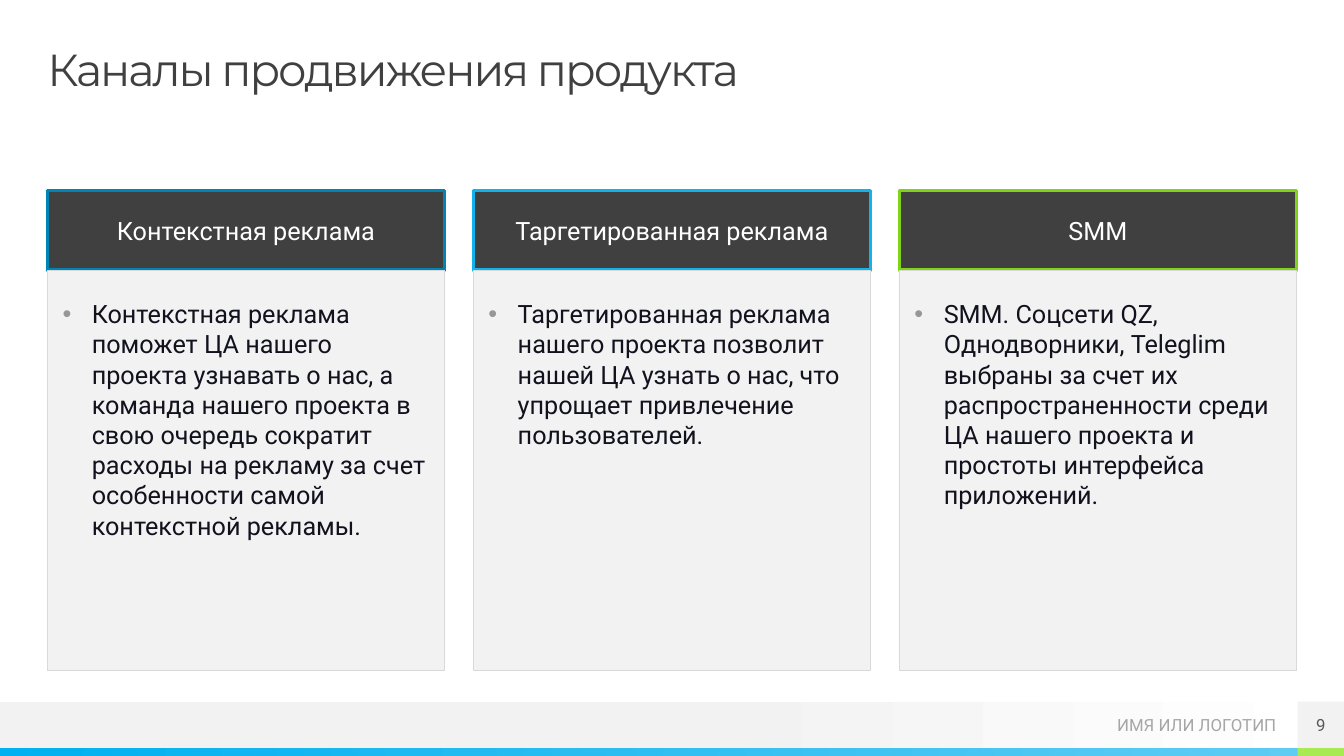
from lxml import etree
from pptx import Presentation
from pptx import util as u
from pptx.dml.color import RGBColor
from pptx.enum import shapes, text
from pptx.oxml import parse_xml
from pptx.oxml.ns import nsdecls

WHITE = RGBColor(0xFF, 0xFF, 0xFF)
PALE = RGBColor(0xF2, 0xF2, 0xF2)
BORDER = RGBColor(0xD9, 0xD9, 0xD9)
SILVER = RGBColor(0xA6, 0xA6, 0xA6)
GREY = RGBColor(0x59, 0x59, 0x59)
DARK = RGBColor(0x40, 0x40, 0x40)
INK = RGBColor(0x12, 0x12, 0x1E)
BLUE = RGBColor(0x00, 0xB0, 0xF0)
SKY = RGBColor(0x5E, 0xCC, 0xF3)
LIME = RGBColor(0xA7, 0xEA, 0x52)
DEEP_BLUE = RGBColor(0x00, 0x84, 0xB4)
CYAN = RGBColor(0x12, 0xB2, 0xEB)
GREEN = RGBColor(0x81, 0xD3, 0x1A)

WIDTH, HEIGHT = 13.33, 7.5
MARGIN = 0.47
CONTENT_W = WIDTH - 2 * MARGIN
COL_W = 3.94
PITCH = (CONTENT_W - COL_W) / 2
HEAD_TOP, HEAD_H, LIST_H = 1.89, 0.79, 3.97
STRIP_H, FOOT_H = 0.08, 0.46
STRIP_TOP = HEIGHT - STRIP_H
FOOT_TOP = STRIP_TOP - FOOT_H
CORNER_X = WIDTH - FOOT_H

COLUMNS = [
    ("Контекстная реклама", DEEP_BLUE,
     "Контекстная реклама поможет ЦА нашего проекта узнавать о нас, а команда "
     "нашего проекта в свою очередь сократит расходы на рекламу за счет "
     "особенности самой контекстной рекламы."),
    ("Таргетированная реклама", CYAN,
     "Таргетированная реклама нашего проекта позволит нашей ЦА узнать о нас, "
     "что упрощает привлечение пользователей."),
    ("SMM", GREEN,
     "SMM. Соцсети QZ, Однодворники, Teleglim выбраны за счет их "
     "распространенности среди ЦА нашего проекта и простоты интерфейса "
     "приложений."),
]

prs = Presentation()
prs.slide_width, prs.slide_height = u.Inches(WIDTH), u.Inches(HEIGHT)
slide = prs.slides.add_slide(prs.slide_layouts.get_by_name("Comparison"))
title, *lists, spare = slide.placeholders
spare.element.getparent().remove(spare.element)


def add_box(left, top, width, height, *colors, start=0):
    """Rectangle with a solid fill, or a left-to-right gradient of two colours."""
    sp = slide.shapes.add_shape(shapes.MSO_SHAPE.RECTANGLE,
                                *map(u.Inches, (left, top, width, height)))
    sp.shadow.inherit = False
    sp.line.fill.background()
    if len(colors) == 1:
        sp.fill.solid()
        sp.fill.fore_color.rgb = colors[0]
    else:
        sp.fill.gradient()
        sp.fill.gradient_angle = 0
        for stop, color, position in zip(sp.fill.gradient_stops, colors, (start, 1)):
            stop.color.rgb = color
            stop.position = position
    return sp


def write(sp, words, size, color, align, anchor, insets=(0, 0, 0, 0), font="Roboto"):
    tf = sp.text_frame
    tf.text = words
    tf.word_wrap = True
    tf.auto_size = text.MSO_AUTO_SIZE.NONE
    tf.vertical_anchor = anchor
    tf.margin_left, tf.margin_top, tf.margin_right, tf.margin_bottom = map(u.Inches, insets)
    p = tf.paragraphs[0]
    p.alignment = align
    r = p.runs[0]
    r.font.name, r.font.size, r.font.bold = font, u.Pt(size), False
    r.font.color.rgb = color
    return p


LEFT, CENTER, RIGHT = text.PP_ALIGN.LEFT, text.PP_ALIGN.CENTER, text.PP_ALIGN.RIGHT
TOP, MIDDLE = text.MSO_ANCHOR.TOP, text.MSO_ANCHOR.MIDDLE

# Footer
add_box(0, FOOT_TOP, WIDTH, FOOT_H, PALE, WHITE, start=0.53)
add_box(0, STRIP_TOP, CORNER_X, STRIP_H, BLUE, SKY)
add_box(CORNER_X, STRIP_TOP, FOOT_H, STRIP_H, LIME)
owner = slide.shapes.add_textbox(*map(u.Inches, (10.42, FOOT_TOP, 2.24, FOOT_H)))
write(owner, "ИМЯ ИЛИ ЛОГОТИП", 12, SILVER, RIGHT, MIDDLE)
number = add_box(CORNER_X, FOOT_TOP, FOOT_H, FOOT_H, PALE)
write(number, "9", 12, GREY, CENTER, MIDDLE)

# Title
title.left = title.top = title.height = u.Inches(MARGIN)
title.width = u.Inches(CONTENT_W)
p = write(title, "Каналы продвижения продукта", 32, DARK, LEFT, TOP, font="Montserrat")
p.line_spacing = 0.9
p.runs[0].font._element.set("spc", "-150")

# Columns
for i, ((heading, accent, words), sp) in enumerate(zip(COLUMNS, lists)):
    left = MARGIN + i * PITCH
    head = add_box(left, HEAD_TOP, COL_W, HEAD_H, DARK)
    head.line.color.rgb = accent
    head.line.width = u.Pt(2.5)
    head_p = write(head, heading, 18, WHITE, CENTER, MIDDLE, (0.12, 0.04, 0.12, 0.04))

    sp.left, sp.top, sp.width, sp.height = map(
        u.Inches, (left, HEAD_TOP + HEAD_H, COL_W, LIST_H))
    sp.fill.solid()
    sp.fill.fore_color.rgb = PALE
    sp.line.color.rgb = BORDER
    sp.line.width = u.Pt(0.75)
    list_p = write(sp, words, 18, INK, LEFT, TOP, (0.15, 0.28, 0.15, 0))
    for p in (head_p, list_p):
        p.space_before, p.space_after = u.Pt(10), u.Pt(5)

    pPr = list_p._p.get_or_add_pPr()
    pPr.set("marL", str(u.Inches(0.29)))
    pPr.set("indent", str(-u.Inches(0.29)))
    pPr.append(parse_xml(f'<a:buClr {nsdecls("a")}><a:srgbClr val="{DARK}">'
                         '<a:alpha val="50000"/></a:srgbClr></a:buClr>'))
    etree.SubElement(pPr, pPr[-1].tag.replace("buClr", "buFont"), typeface="Arial")
    etree.SubElement(pPr, pPr[-1].tag.replace("buFont", "buChar"), char="•")
    head.element.addnext(sp.element)  # the list covers the heading's lower border

prs.save("out.pptx")
